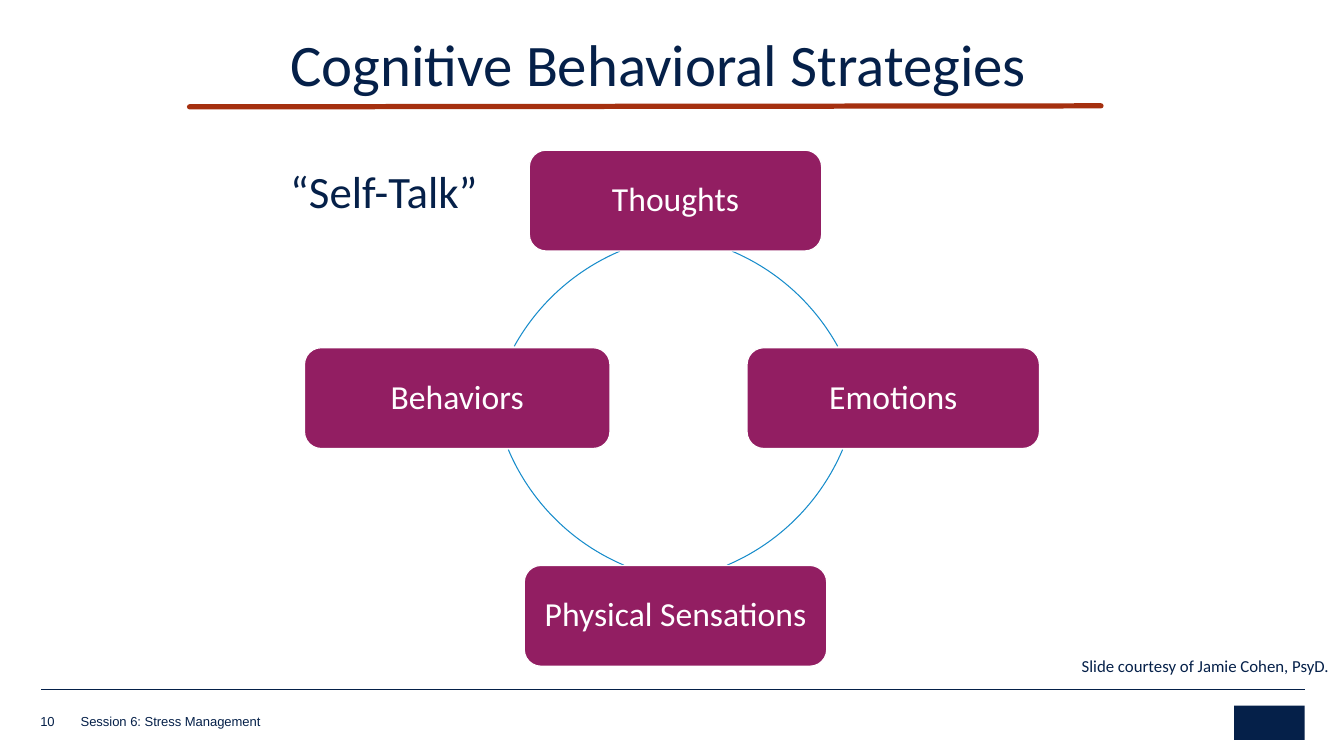
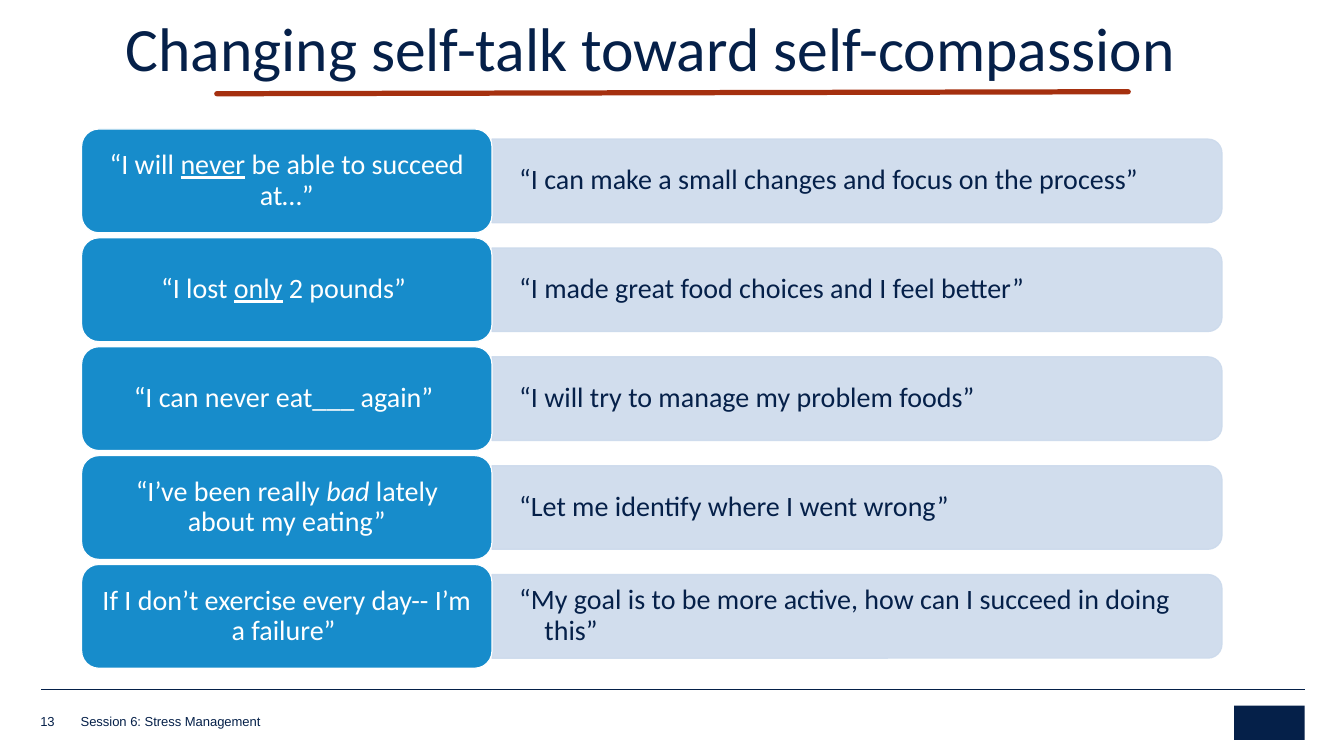
from dataclasses import dataclass

from lxml.etree import SubElement
from pptx import Presentation
from pptx.dml.color import RGBColor
from pptx.enum.shapes import MSO_CONNECTOR, MSO_SHAPE
from pptx.enum.text import MSO_ANCHOR, MSO_AUTO_SIZE, PP_ALIGN
from pptx.oxml.ns import qn
from pptx.util import Inches, Pt


@dataclass(frozen=True)
class Theme:
    # Colours
    navy: str = "052049"
    rust: str = "A5300F"
    plum: str = "921E62"
    blue: str = "178CCB"
    pale: str = "CCDAEC"
    white: str = "FFFFFF"
    # Fonts
    body: str = "Calibri"
    foot: str = "Arial"
    # Type sizes
    head: float = 42
    large: float = 44
    node: float = 24
    row: float = 20
    talk: float = 32
    note: float = 12
    small: float = 9.3
    # Line widths
    thin: float = 0.25
    arc: float = 0.75
    edge: float = 0.85
    bold: float = 3.75


def tint(name):
    return RGBColor.from_string(name)


def fade(shape, part):
    """Make the fill and line of a shape partly opaque."""
    for color in shape._element.spPr.iter(qn("a:srgbClr")):
        SubElement(color, qn("a:alpha")).set("val", str(part * 1000))


class Deck:
    def __init__(self, theme):
        self.theme = theme
        self.file = Presentation()
        self.file.slide_width = Inches(13.33)
        self.file.slide_height = Inches(7.5)
        self.slide = None

    def start(self, number):
        """Add a slide with the shared footer."""
        look = self.theme
        self.slide = self.file.slides.add_slide(self.file.slide_layouts[5])
        self.line((0.41, 6.84), (12.94, 6.84), look.navy, look.thin)
        self.shape(MSO_SHAPE.RECTANGLE, (12.24, 7, 0.7, 0.34), look.navy)
        for box, text in (
            ((0.8, 7.08, 6.29, 0.15), "Session 6: Stress Management"),
            ((0.4, 7.06, 0.36, 0.17), number),
        ):
            self.text(box, text, look.small, font=look.foot, pad=(0, 0),
                      anchor=MSO_ANCHOR.BOTTOM)

    def title(self, box, text, size, rule, align=PP_ALIGN.LEFT):
        """Place the title and the rule below it."""
        look = self.theme
        head = self.slide.shapes.title
        head.left, head.top, head.width, head.height = map(Inches, box)
        self.label(head, text, size, look.navy, align=align)
        left, top, drop = rule
        rod = self.line((left, top), (left + 9.04, top - drop),
                        look.rust, look.bold)
        rod.line._get_or_add_ln().set("cap", "rnd")

    def line(self, start, end, color, width):
        rod = self.slide.shapes.add_connector(
            MSO_CONNECTOR.STRAIGHT, *map(Inches, start + end))
        rod.line.color.rgb = tint(color)
        rod.line.width = Pt(width)
        SubElement(rod._element.spPr, qn("a:effectLst"))
        return rod

    def shape(self, kind, box, fill=None, edge=None, width=0.85):
        item = self.slide.shapes.add_shape(kind, *map(Inches, box))
        item.shadow.inherit = False
        if fill:
            item.fill.solid()
            item.fill.fore_color.rgb = tint(fill)
        else:
            item.fill.background()
        if edge:
            item.line.color.rgb = tint(edge)
            item.line.width = Pt(width)
        else:
            item.line.fill.background()
        return item

    def card(self, box, text, size, fill, pad):
        """Draw a rounded box with centred white text."""
        look = self.theme
        item = self.shape(MSO_SHAPE.ROUNDED_RECTANGLE, box, fill,
                          look.white, look.edge)
        self.label(item, text, size, look.white, align=PP_ALIGN.CENTER,
                   anchor=MSO_ANCHOR.MIDDLE, pad=pad, space=0.9)

    def arc(self, left, top, start, end):
        """Draw part of a circle, clockwise, with angles in degrees."""
        look = self.theme
        item = self.shape(MSO_SHAPE.ARC, (left, top, 4.33, 4.33),
                          edge=look.blue, width=look.arc)
        for spot, angle in enumerate((start, end)):
            item.adjustments[spot] = angle * 0.6

    def bar(self, left, mid, text):
        """Draw a pale bar, rounded at its right end, with its text."""
        look = self.theme
        long, thick = 7.24, 0.83
        box = (left + (long - thick) / 2, mid - long / 2, thick, long)
        item = self.shape(MSO_SHAPE.ROUND_2_SAME_RECTANGLE, box, look.pale,
                          look.pale, look.edge)
        item.rotation = 90
        fade(item, 90)
        words = self.text((left, mid - 0.38, 7.2, 0.75), text, look.row,
                          anchor=MSO_ANCHOR.MIDDLE, pad=(0.27, 0.14),
                          space=0.9)
        props = words.text_frame.paragraphs[0]._p.get_or_add_pPr()
        props.set("marL", str(Inches(0.25)))
        props.set("indent", str(Inches(-0.25)))

    def text(self, box, text, size, **style):
        item = self.slide.shapes.add_textbox(*map(Inches, box))
        self.label(item, text, size, self.theme.navy, **style)
        return item

    def label(self, item, text, size, color, font=None, align=PP_ALIGN.LEFT,
              anchor=MSO_ANCHOR.TOP, pad=(0.1, 0.05), space=None, wrap=True):
        """Fill a frame with text; a tuple gives plain, marked, plain parts."""
        frame = item.text_frame
        frame.auto_size = MSO_AUTO_SIZE.NONE
        frame.word_wrap = wrap
        frame.vertical_anchor = anchor
        frame.margin_left = frame.margin_right = Inches(pad[0])
        frame.margin_top = frame.margin_bottom = Inches(pad[1])
        para = frame.paragraphs[0]
        if isinstance(text, str):
            para.text = text
        else:
            *parts, mark = text
            for part in parts:
                para.add_run().text = part
            marked = para.runs[1].font
            marked.underline = mark == "underline"
            marked.italic = mark == "italic"
        para.alignment = align
        if space:
            para.line_spacing = space
        for run in para.runs:
            run.font.name = font or self.theme.body
            run.font.size = Pt(size)
            run.font.color.rgb = tint(color)


def cycle(deck):
    look = deck.theme
    deck.start("10")
    deck.title((2.78, 0.22, 10.48, 1.33), "Cognitive Behavioral Strategies",
               look.head, (1.88, 1.06, 0.01))

    # Ring
    for ring in ((4.25, 2.32, 293, 331), (4.2, 1.45, 23, 67),
                 (4.87, 1.45, 113, 157), (4.83, 2.32, 209, 247)):
        deck.arc(*ring)

    # Nodes
    for left, top, width, name in (
        (5.25, 1.49, 2.9, "Thoughts"),
        (7.41, 3.45, 2.9, "Emotions"),
        (5.2, 5.61, 3, "Physical Sensations"),
        (3.02, 3.45, 3.03, "Behaviors"),
    ):
        deck.card((left, top, width, 1), name, look.node, look.plum,
                  (0.15, 0.15))

    # Labels
    deck.text((2.78, 1.58, 2.08, 0.64), "“Self-Talk”", look.talk, wrap=False)
    deck.text((10.63, 6.46, 2.7, 0.3), "Slide courtesy of Jamie Cohen, PsyD.",
              look.note, wrap=False)


def swaps(deck):
    look = deck.theme
    deck.start("13")
    deck.title((0.29, 0.05, 12.33, 0.94),
               "Changing self-talk toward self-compassion", look.large,
               (2.15, 0.93, 0.02), PP_ALIGN.CENTER)

    # Pairs of harsh and kind thoughts
    pairs = (
        (("“I will ", "never", " be able to succeed at…”", "underline"),
         "“I can make a small changes and focus on the process”"),
        (("“I lost ", "only", " 2 pounds” ", "underline"),
         "“I made great food choices and I feel better”"),
        ("“I can never eat___ again” ",
         "“I will try to manage my problem foods”"),
        (("“I’ve been really ", "bad", " lately about my eating”", "italic"),
         "“Let me identify where I went wrong”"),
        ("If I don’t exercise every day-- I’m a failure” ",
         "“My goal is to be more active, how can I succeed in doing this”"),
    )
    left, top, width, height, gap = 0.81, 1.28, 4.07, 1.03, 0.05
    for row, (harsh, kind) in enumerate(pairs):
        y = top + row * (height + gap)
        deck.bar(left + width, y + height / 2, kind)
        deck.card((left, y, width, height), harsh, look.row, look.blue,
                  (0.13, 0.09))


def main():
    deck = Deck(Theme())
    cycle(deck)
    swaps(deck)
    deck.file.save("out.pptx")


if __name__ == "__main__":
    main()
